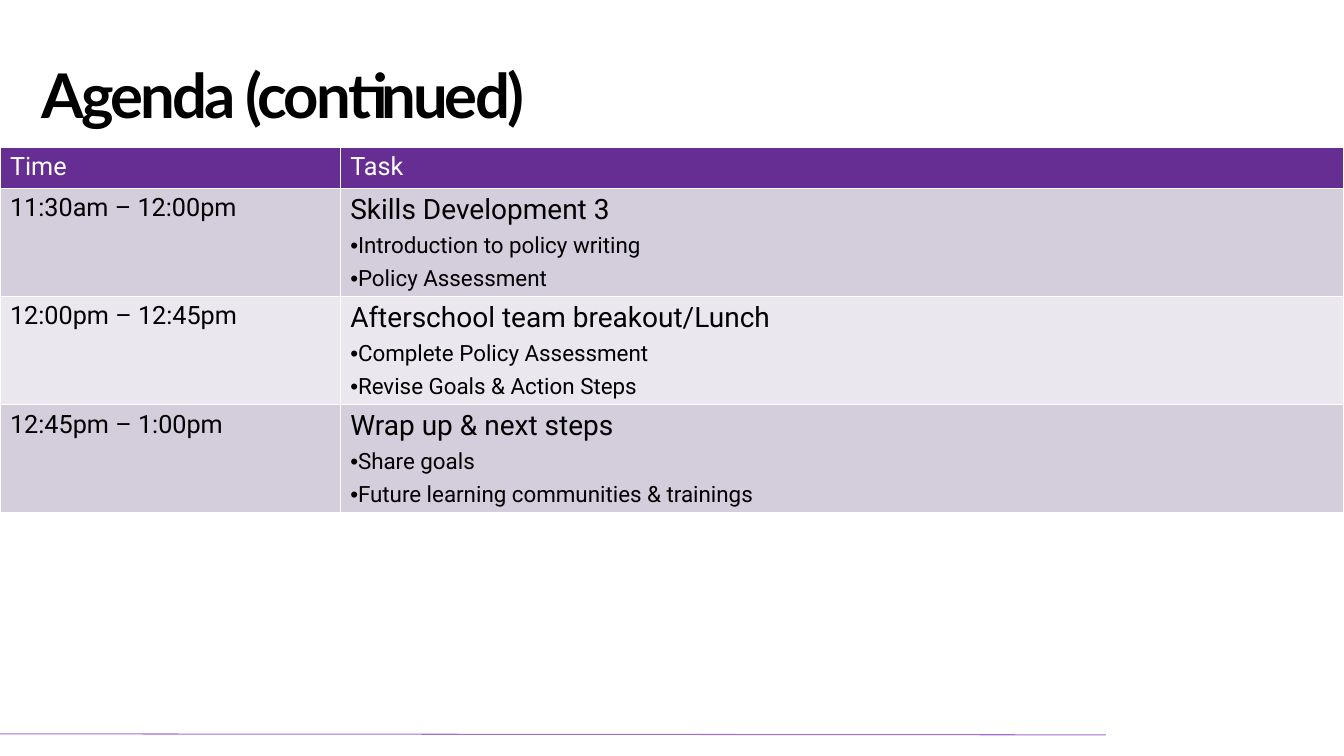
from lxml import etree
from pptx import Presentation
from pptx.dml.color import RGBColor
from pptx.enum import shapes, text
from pptx.oxml import ns
from pptx.util import Pt

COLORS = {
    "header": "662E93",
    "odd": "D3CDDC",
    "even": "EAE8EE",
    "rule": "A56ED2",
    "white": "FFFFFF",
    "black": "000000",
}
TITLE_FONT = {"name": "Lato", "size": Pt(44), "bold": True}
HEADER = ("Time", "Task")
AGENDA = [
    ("11:30am – 12:00pm", "Skills Development 3",
     ["Introduction to policy writing", "Policy Assessment"]),
    ("12:00pm – 12:45pm", "Afterschool team breakout/Lunch",
     ["Complete Policy Assessment", "Revise Goals & Action Steps"]),
    ("12:45pm – 1:00pm", "Wrap up & next steps",
     ["Share goals", "Future learning communities & trainings"]),
]


def rgb(key):
    """Return the named colour."""
    return RGBColor.from_string(COLORS[key])


def add_sub(parent, tag, **attrs):
    """Append a drawing element with the given attributes."""
    return etree.SubElement(parent, ns.qn(tag), attrs)


def set_font(font, color, **values):
    """Apply a colour and format values to a font."""
    for key, value in values.items():
        setattr(font, key, value)
    font.color.rgb = rgb(color)


def write_run(p, words, color, size):
    """Add a body run to a paragraph."""
    r = p.add_run()
    r.text = words
    set_font(r.font, color, name="Roboto", size=Pt(size), bold=False)


def add_bullet(tf, words):
    """Add a bulleted paragraph to a text frame."""
    p = tf.add_paragraph()
    p.line_spacing = 1.25
    pPr = p._p.get_or_add_pPr()
    pPr.set("marL", "0")
    pPr.set("indent", "0")
    add_sub(pPr, "a:buFont", typeface="Arial")
    add_sub(pPr, "a:buChar", char="•")
    write_run(p, words, "black", 16)


def style_cell(cell, fill):
    """Give a cell white borders and a solid fill."""
    tcPr = cell._tc.get_or_add_tcPr()
    for side in ("a:lnL", "a:lnR", "a:lnT", "a:lnB"):
        ln = add_sub(tcPr, side, w=str(Pt(1)))
        add_sub(add_sub(ln, "a:solidFill"), "a:srgbClr", val=COLORS["white"])
    cell.fill.solid()
    cell.fill.fore_color.rgb = rgb(fill)


def add_title(s, words, left, top, width, height):
    """Place and format the slide title."""
    sp = s.shapes.title
    box = {"left": left, "top": top, "width": width, "height": height}
    for key, value in box.items():
        setattr(sp, key, Pt(value))
    tf = sp.text_frame
    tf.word_wrap = True
    tf.vertical_anchor = text.MSO_ANCHOR.MIDDLE
    p = tf.paragraphs[0]
    p.alignment = text.PP_ALIGN.LEFT
    p.line_spacing = 0.9
    r = p.add_run()
    r.text = words
    set_font(r.font, "black", **TITLE_FONT)
    r.font._element.set("spc", "-200")


def add_agenda(s, left, top, width, head_height, row_height, time_width):
    """Build the agenda table."""
    height = head_height + row_height * len(AGENDA)
    table = s.shapes.add_table(len(AGENDA) + 1, 2, Pt(left), Pt(top),
                               Pt(width), Pt(height)).table
    for column, w in zip(table.columns, (time_width, width - time_width)):
        column.width = Pt(w)
    table.rows[0].height = Pt(head_height)
    for i, label in enumerate(HEADER):
        cell = table.cell(0, i)
        style_cell(cell, "header")
        write_run(cell.text_frame.paragraphs[0], label, "white", 18)
    for i, (time, task, points) in enumerate(AGENDA, 1):
        table.rows[i].height = Pt(row_height)
        for j, (words, size) in enumerate(((time, 18), (task, 20))):
            cell = table.cell(i, j)
            style_cell(cell, "odd" if i % 2 else "even")
            write_run(cell.text_frame.paragraphs[0], words, "black", size)
        for point in points:
            add_bullet(table.cell(i, 1).text_frame, point)


def add_rule(s, left, top, width, drop):
    """Draw the thin footer line."""
    line = s.shapes.add_connector(shapes.MSO_CONNECTOR.STRAIGHT,
                                  Pt(left + width), Pt(top + drop),
                                  Pt(left), Pt(top))
    line.line.color.rgb = rgb("rule")
    line.line.width = Pt(0.75)
    add_sub(line._element.spPr, "a:effectLst")


def main():
    """Build and save the agenda slide."""
    prs = Presentation()
    prs.slide_width, prs.slide_height = Pt(960), Pt(540)
    s = prs.slides.add_slide(prs.slide_layouts[5])
    add_rule(s, 0, 524.2, 790, 0.7)
    add_title(s, "Agenda (continued)", 22.3, 18, 828, 104.4)
    add_agenda(s, 0, 105.4, 960, 29.2, 77.1, 243)
    prs.save("out.pptx")


if __name__ == "__main__":
    main()
